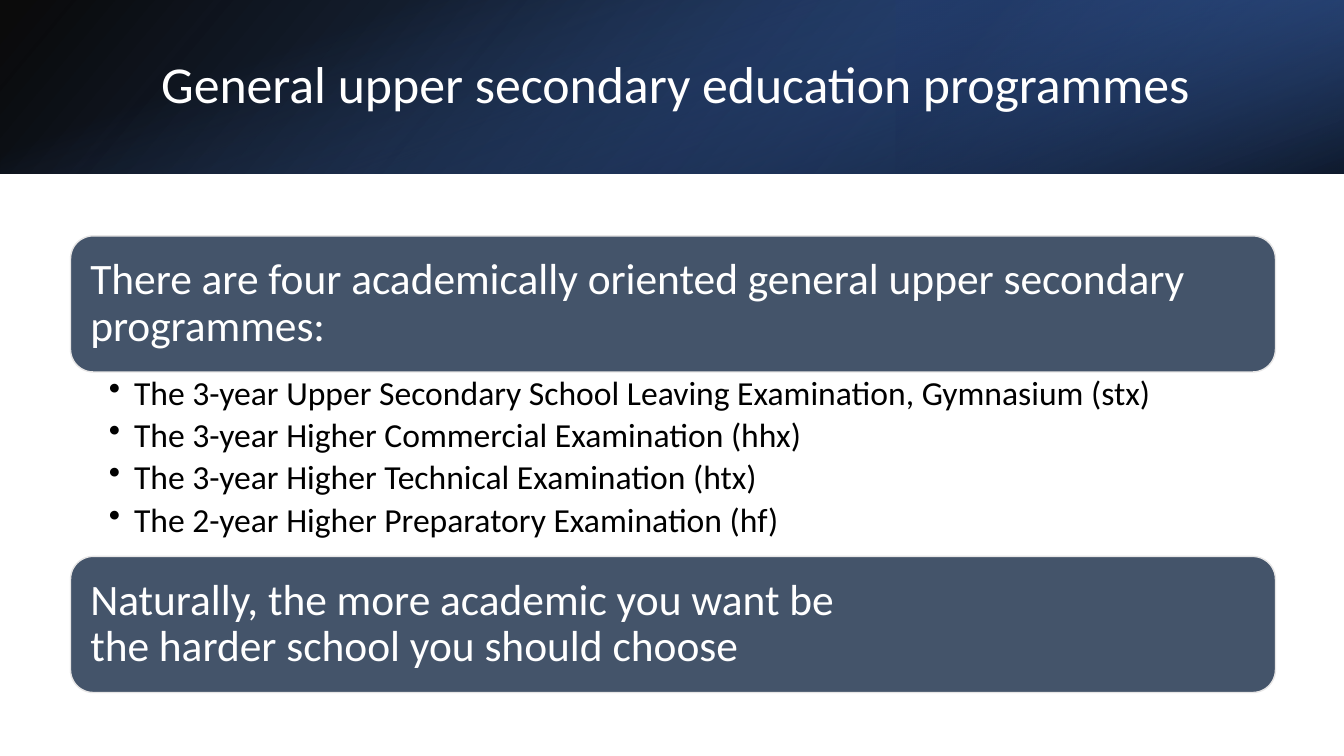
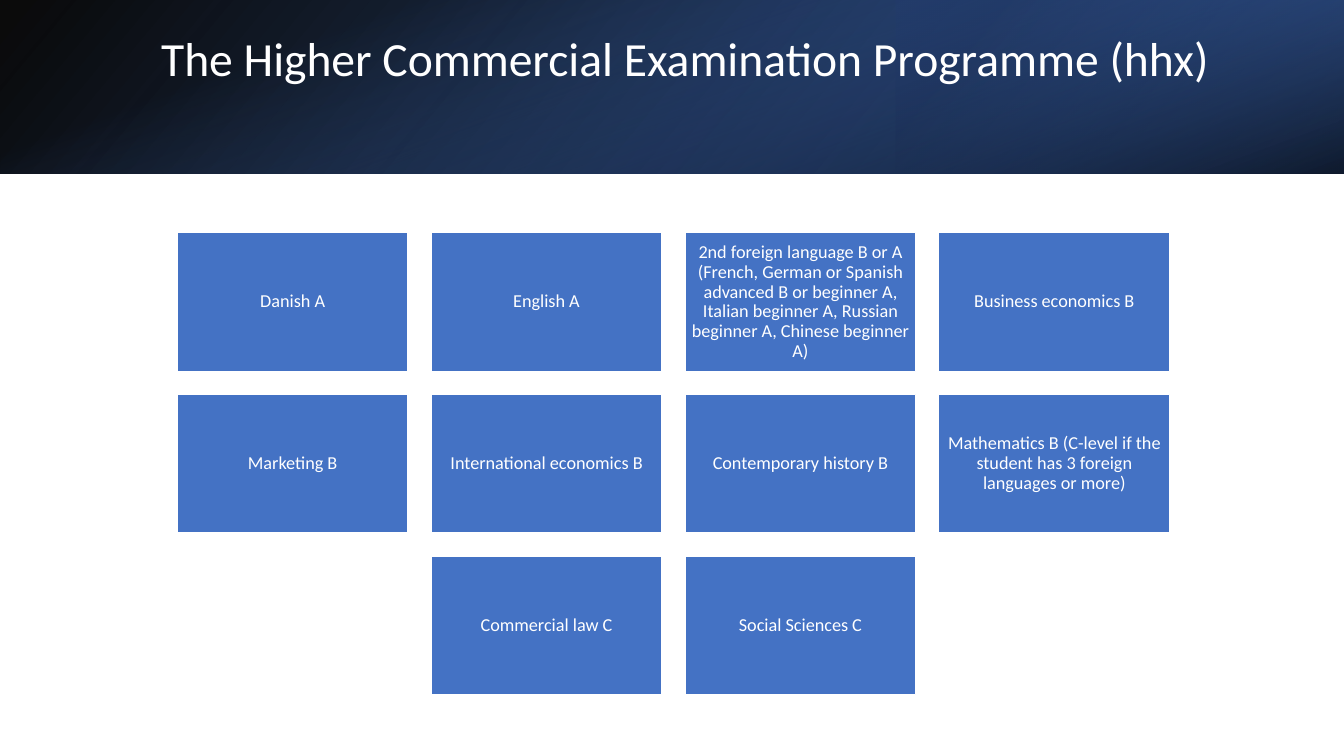
from dataclasses import dataclass

from lxml import etree
from pptx import Presentation
from pptx import util as u
from pptx.dml.color import RGBColor
from pptx.enum import shapes, text
from pptx.oxml import ns

FONT = "Calibri"
WHITE = RGBColor(0xFF, 0xFF, 0xFF)
BLACK = RGBColor(0x00, 0x00, 0x00)
NAVY = RGBColor(0x20, 0x38, 0x64)
ROYAL = RGBColor(0x2F, 0x55, 0x97)
BLUE = RGBColor(0x44, 0x72, 0xC4)
SLATE = RGBColor(0x44, 0x54, 0x6A)
PALE = RGBColor(0xE7, 0xE6, 0xE6)

SLIDE_WIDTH = u.Inches(13.33)
SLIDE_HEIGHT = u.Inches(7.5)


@dataclass(frozen=True)
class Frame:
    """Percentages of the slide's width and height."""

    left: float
    top: float
    width: float
    height: float

    def emu(self) -> tuple[int, int, int, int]:
        return (
            round(self.left * SLIDE_WIDTH / 100),
            round(self.top * SLIDE_HEIGHT / 100),
            round(self.width * SLIDE_WIDTH / 100),
            round(self.height * SLIDE_HEIGHT / 100),
        )


@dataclass(frozen=True)
class Stop:
    position: float
    color: RGBColor
    opacity: int


@dataclass(frozen=True)
class Band:
    frame: Frame
    rotation: int
    flipped: bool
    angle: int
    stops: tuple[Stop, Stop]


@dataclass(frozen=True)
class TextStyle:
    size: float
    color: RGBColor = WHITE
    align: text.PP_ALIGN = text.PP_ALIGN.LEFT
    anchor: text.MSO_ANCHOR = text.MSO_ANCHOR.MIDDLE
    insets: tuple[float, float, float, float] = (0.1, 0.05, 0.1, 0.05)
    space_after: float = 0
    bullet: bool = False


@dataclass(frozen=True)
class CardStyle:
    preset: shapes.MSO_SHAPE
    fill: RGBColor
    outline: RGBColor
    text: TextStyle


FULL_BAND = Frame(0, 0, 100, 23)
RIGHT_BAND = Frame(66.67, 0, 33.33, 23)
HEADER_BANDS = (
    Band(FULL_BAND, 0, True, 220, (Stop(0, BLACK, 96), Stop(1, ROYAL, 100))),
    Band(RIGHT_BAND, 180, True, 40, (Stop(0.19, NAVY, 68), Stop(1, BLUE, 79))),
    Band(FULL_BAND, 90, False, 20, (Stop(0.23, BLUE, 0), Stop(0.99, BLACK, 74))),
)

TITLE = Frame(11.25, 5.07, 82.37, 12.8)
RAISED_TITLE = Frame(11.25, 4, 82.37, 8.2)

STACK_LEFT, STACK_TOP, STACK_WIDTH = 5.25, 31.2, 89.65
STATEMENT_HEIGHT, LIST_HEIGHT = 18, 24.4
STATEMENT = CardStyle(
    shapes.MSO_SHAPE.ROUNDED_RECTANGLE, SLATE, PALE,
    TextStyle(31, insets=(0.13, 0.13, 0.13, 0.13)),
)
BULLETS = TextStyle(
    24, BLACK, anchor=text.MSO_ANCHOR.TOP, insets=(0.38, 0.04, 0.24, 0.04),
    space_after=4.4, bullet=True,
)
PROGRAMMES = (
    "The 3-year Upper Secondary School Leaving Examination, Gymnasium (stx)",
    "The 3-year Higher Commercial Examination (hhx)",
    "The 3-year Higher Technical Examination (htx)",
    "The 2-year Higher Preparatory Examination (hf)",
)

GRID_LEFT, GRID_TOP, GRID_COLUMNS = 13.18, 30.8, 4
CARD_WIDTH, CARD_HEIGHT = 17.18, 18.32
COLUMN_STEP, ROW_STEP = 18.89, 21.37
SUBJECT = CardStyle(
    shapes.MSO_SHAPE.RECTANGLE, BLUE, WHITE,
    TextStyle(13, align=text.PP_ALIGN.CENTER, insets=(0.05, 0.05, 0.05, 0.05)),
)
SUBJECTS = (
    "Danish A",
    "English A",
    "2nd foreign language B or A (French, German or Spanish advanced B or beginner A, "
    "Italian beginner A, Russian beginner A, Chinese beginner A)",
    "Business economics B",
    "Marketing B",
    "International economics B",
    "Contemporary history B",
    "Mathematics B (C-level if the student has 3 foreign languages or more)",
    "Commercial law C",
    "Social Sciences C",
)


def add_bullet(para) -> None:
    properties = para._p.get_or_add_pPr()
    properties.set("marL", str(u.Inches(0.25)))
    properties.set("indent", str(-u.Inches(0.25)))
    etree.SubElement(properties, ns.qn("a:buChar")).set("char", "•")


def write_text(shape, lines: tuple[str, ...], style: TextStyle) -> None:
    frame = shape.text_frame
    frame.word_wrap = True
    frame.vertical_anchor = style.anchor
    frame.margin_left, frame.margin_top, frame.margin_right, frame.margin_bottom = (
        u.Inches(inset) for inset in style.insets
    )
    for index, line in enumerate(lines):
        para = frame.add_paragraph() if index else frame.paragraphs[0]
        para.text = line
        if style.bullet:
            add_bullet(para)
        para.alignment = style.align
        para.line_spacing = 0.9
        para.space_after = u.Pt(style.space_after)
        para.font.name = FONT
        para.font.size = u.Pt(style.size)
        para.font.color.rgb = style.color


def add_text(page, frame: Frame, lines: tuple[str, ...], style: TextStyle) -> None:
    write_text(page.shapes.add_textbox(*frame.emu()), lines, style)


def add_card(page, frame: Frame, line: str, style: CardStyle) -> None:
    card = page.shapes.add_shape(style.preset, *frame.emu())
    card.shadow.inherit = False
    card.fill.solid()
    card.fill.fore_color.rgb = style.fill
    card.line.color.rgb = style.outline
    card.line.width = u.Pt(1)
    write_text(card, (line,), style.text)


def add_band(page, band: Band) -> None:
    left, top, width, height = band.frame.emu()
    if band.rotation == 90:
        left, top = left + (width - height) // 2, top + (height - width) // 2
        width, height = height, width
    shape = page.shapes.add_shape(shapes.MSO_SHAPE.RECTANGLE, left, top, width, height)
    shape.shadow.inherit = False
    shape.rotation = band.rotation
    if band.flipped:
        shape.element.spPr.xfrm.set("flipH", "1")
    shape.fill.gradient()
    shape.fill.gradient_angle = band.angle
    for target, stop in zip(shape.fill.gradient_stops, band.stops):
        target.position = stop.position
        target.color.rgb = stop.color
    for color, stop in zip(shape.element.spPr.iter(ns.qn("a:srgbClr")), band.stops):
        etree.SubElement(color, ns.qn("a:alpha")).set("val", str(stop.opacity * 1000))
    shape.line.fill.background()


def add_page(deck, title: str, size: float, frame: Frame):
    page = deck.slides.add_slide(deck.slide_layouts[6])
    for band in HEADER_BANDS:
        add_band(page, band)
    add_text(page, frame, (title,), TextStyle(size))
    return page


def build_programmes(deck) -> None:
    page = add_page(deck, "General upper secondary education programmes", 37, TITLE)
    list_top = STACK_TOP + STATEMENT_HEIGHT
    statements = (
        (STACK_TOP, "There are four academically oriented general upper secondary programmes:"),
        (
            list_top + LIST_HEIGHT,
            "Naturally, the more academic you want be\vthe harder school you should choose",
        ),
    )
    for top, statement in statements:
        frame = Frame(STACK_LEFT, top, STACK_WIDTH, STATEMENT_HEIGHT)
        add_card(page, frame, statement, STATEMENT)
    add_text(page, Frame(STACK_LEFT, list_top, STACK_WIDTH, LIST_HEIGHT), PROGRAMMES, BULLETS)


def build_subjects(deck) -> None:
    page = add_page(deck, "The Higher Commercial Examination Programme (hhx)", 34, RAISED_TITLE)
    for index, subject in enumerate(SUBJECTS):
        row, column = divmod(index, GRID_COLUMNS)
        cards_in_row = min(GRID_COLUMNS, len(SUBJECTS) - row * GRID_COLUMNS)
        offset = (GRID_COLUMNS - cards_in_row) / 2
        frame = Frame(
            GRID_LEFT + (column + offset) * COLUMN_STEP,
            GRID_TOP + row * ROW_STEP,
            CARD_WIDTH,
            CARD_HEIGHT,
        )
        add_card(page, frame, subject, SUBJECT)


def main() -> None:
    deck = Presentation()
    deck.slide_width = SLIDE_WIDTH
    deck.slide_height = SLIDE_HEIGHT
    build_programmes(deck)
    build_subjects(deck)
    deck.save("out.pptx")


if __name__ == "__main__":
    main()
